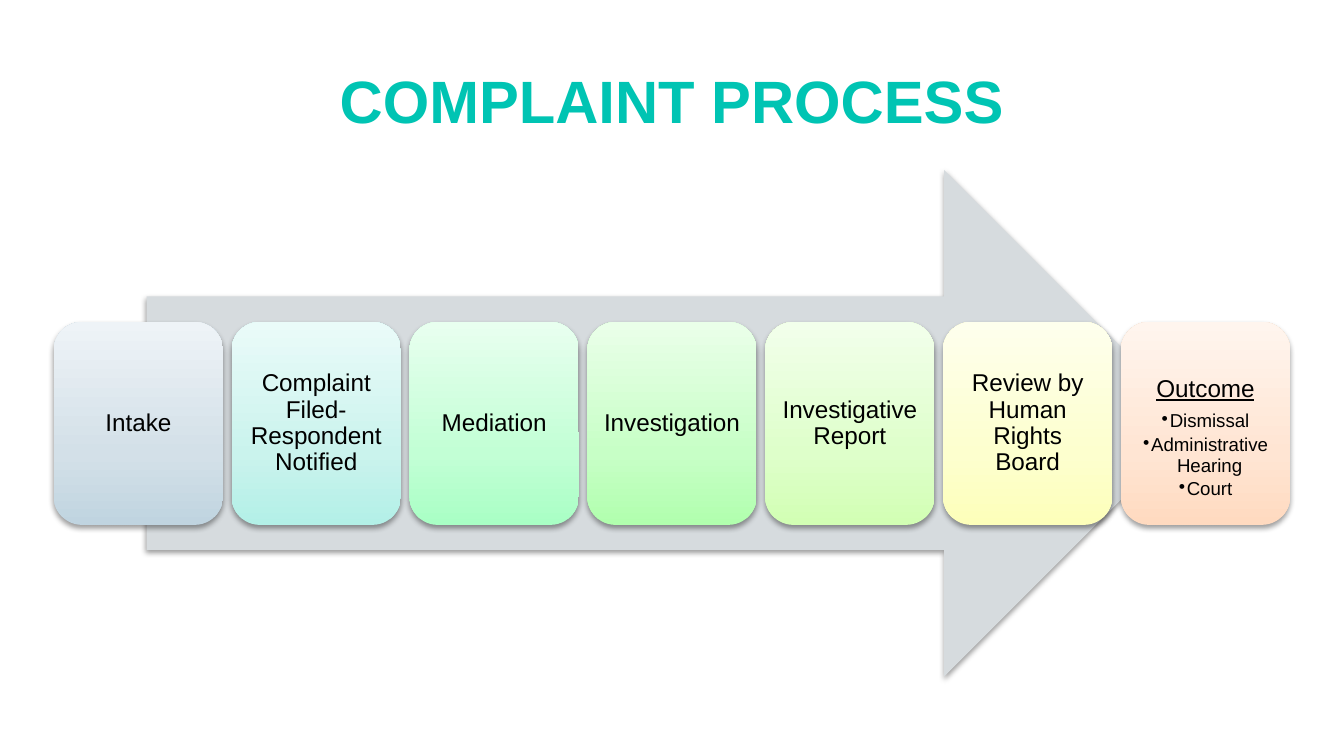
from copy import deepcopy

from pptx import Presentation
from pptx.dml.color import RGBColor
from pptx.enum.shapes import MSO_SHAPE as SHAPE
from pptx.enum.text import MSO_ANCHOR as ANCHOR, PP_ALIGN as ALIGN
from pptx.oxml import parse_xml
from pptx.oxml.ns import nsdecls, qn
from pptx.util import Pt

COLORS = {"title": "00C4B3", "arrow": "D6DBDE", "text": "000000"}
FONT = "Arial"

# Label and gradient colours from bottom to top
STEPS = [
    ("Intake", ("C0D4E0", "D3E0E8", "EEF3F7")),
    ("Complaint Filed- Respondent Notified", ("B3F0E7", "CAF3ED", "EAFBF9")),
    ("Mediation", ("A9FFC5", "C2FFD5", "E8FFEF")),
    ("Investigation", ("B1FFAE", "C7FFC6", "EAFFE9")),
    ("Investigative Report", ("D2FFB4", "DEFFCA", "F2FFEB")),
    ("Review by Human Rights Board", ("FDFFBA", "FDFFCE", "FEFFED")),
    ("Outcome", ("FFDAC0", "FFE5D3", "FFF5EE")),
]
OUTCOMES = ["Dismissal", "Administrative Hearing", "Court"]
STOPS = (0, 0.35, 1)

STEP_LEFT, STEP_TOP = 28.8, 172.5
STEP_WIDTH, STEP_HEIGHT = 90.72, 108.7
STEP_PITCH = 95.28


def rgb(color):
    return RGBColor.from_string(color)


def write(p, text, size=13, color=COLORS["text"], bold=False,
          underline=False, spacing=0.9, after=0):
    p.alignment = ALIGN.CENTER
    p.line_spacing = spacing
    p.space_after = Pt(after)
    r = p.add_run()
    r.text = text
    font = r.font
    font.name, font.size, font.bold = FONT, Pt(size), bold
    font.underline = underline
    font.color.rgb = rgb(color)


def add_bullet(p, indent=4.3):
    pPr = p._p.get_or_add_pPr()
    pPr.set("marL", str(Pt(indent)))
    pPr.set("indent", str(-Pt(indent)))
    pPr.append(parse_xml(f'<a:buChar {nsdecls("a")} char="•"/>'))


def add_shadow(sp):
    sp.shadow.inherit = False
    effects = sp._element.spPr.find(qn("a:effectLst"))
    effects.append(parse_xml(
        f'<a:outerShdw {nsdecls("a")} blurRad="{Pt(3.1)}" dist="{Pt(1.6)}" '
        'dir="5400000" rotWithShape="0"><a:srgbClr val="000000">'
        '<a:alpha val="38000"/></a:srgbClr></a:outerShdw>'))


def fill_gradient(sp, colors):
    """Fill upwards, from the first colour at the bottom."""
    fill = sp.fill
    fill.gradient()
    fill.gradient_angle = 90
    stop_list = sp._element.spPr.find(f'.//{qn("a:gsLst")}')
    stop_list.append(deepcopy(stop_list[0]))
    for stop, color, position in zip(fill.gradient_stops, colors, STOPS):
        stop.color.rgb = rgb(color)
        stop.position = position


def add_shape(slide, kind, left, top, width, height):
    sp = slide.shapes.add_shape(kind, Pt(left), Pt(top), Pt(width), Pt(height))
    sp.line.fill.background()
    add_shadow(sp)
    return sp


def add_title(slide, text):
    title = slide.shapes.title
    title.left, title.top = Pt(24.5), Pt(23.8)
    title.width, title.height = Pt(671), Pt(45.4)
    tf = title.text_frame
    tf.vertical_anchor = ANCHOR.TOP
    tf.margin_top = Pt(10.5)
    write(tf.paragraphs[0], text, size=32, color=COLORS["title"],
          bold=True, spacing=1.0)


def add_arrow(slide):
    arrow = add_shape(slide, SHAPE.RIGHT_ARROW, 78.5, 91, 563, 271.5)
    arrow.fill.solid()
    arrow.fill.fore_color.rgb = rgb(COLORS["arrow"])


def add_step(slide, index, label, colors, bullets=()):
    sp = add_shape(slide, SHAPE.ROUNDED_RECTANGLE,
                   STEP_LEFT + index * STEP_PITCH, STEP_TOP,
                   STEP_WIDTH, STEP_HEIGHT)
    fill_gradient(sp, colors)
    tf = sp.text_frame
    tf.word_wrap = True
    tf.margin_left = tf.margin_right = Pt(3.6)
    tf.margin_top = tf.margin_bottom = Pt(3.6)
    tf.vertical_anchor = ANCHOR.MIDDLE
    if bullets:
        tf.vertical_anchor = ANCHOR.TOP
        tf.margin_top = Pt(24.6)
    write(tf.paragraphs[0], label, underline=bool(bullets),
          after=5 if bullets else 0)
    for text in bullets:
        p = tf.add_paragraph()
        p.level = 1
        write(p, text, size=10, after=2)
        add_bullet(p)


def main():
    prs = Presentation()
    prs.slide_width, prs.slide_height = Pt(720), Pt(405)
    slide = prs.slides.add_slide(prs.slide_layouts[5])
    add_title(slide, "COMPLAINT PROCESS")
    add_arrow(slide)
    for index, (label, colors) in enumerate(STEPS):
        bullets = OUTCOMES if label == "Outcome" else ()
        add_step(slide, index, label, colors, bullets)
    prs.save("out.pptx")


if __name__ == "__main__":
    main()
